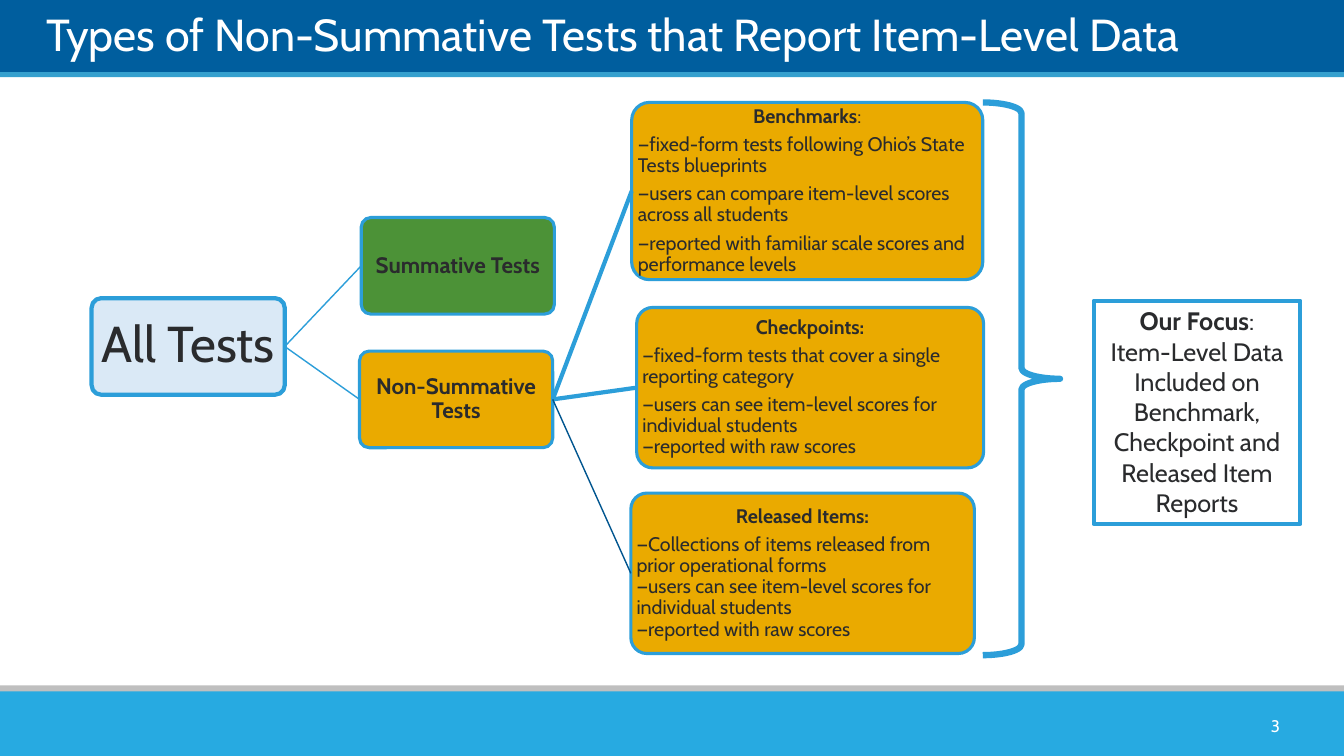
"""Build the slide that sorts tests into summative and non-summative types."""
from lxml.etree import SubElement
from pptx import Presentation
from pptx.dml.color import RGBColor
from pptx.enum.shapes import MSO_CONNECTOR as LINK, MSO_SHAPE as SHAPE
from pptx.enum.text import MSO_ANCHOR as ANCHOR, PP_ALIGN as ALIGN
from pptx.oxml.ns import qn
from pptx.util import Inches, Pt

WHITE = RGBColor(0xFF, 0xFF, 0xFF)
INK = RGBColor(0x2A, 0x2B, 0x2D)
NAVY = RGBColor(0x00, 0x55, 0x8F)
HEADER = RGBColor(0x00, 0x5E, 0x9E)
STRIPE = RGBColor(0x35, 0xA0, 0xCE)
SILVER = RGBColor(0xBF, 0xBF, 0xBF)
FOOTER = RGBColor(0x27, 0xAA, 0xE1)
BLUE = RGBColor(0x2C, 0x9E, 0xD9)
PALE = RGBColor(0xDA, 0xE9, 0xF6)
GOLD = RGBColor(0xEA, 0xAA, 0x00)
GREEN = RGBColor(0x4C, 0x92, 0x37)

deck = Presentation()
deck.slide_width, deck.slide_height = Inches(13.33), Inches(7.5)
page = deck.slides.add_slide(deck.slide_layouts[6])
COLUMN, ROW = deck.slide_width / 160, deck.slide_height / 90


def add_box(kind, column, row, columns, rows, fill=None, line=None, width=2.25):
    """Add a shape placed in grid columns and rows."""
    box = page.shapes.add_shape(kind, round(column * COLUMN), round(row * ROW),
                                round(columns * COLUMN), round(rows * ROW))
    box.shadow.inherit = False
    for paint, color in ((box.fill, fill), (box.line.fill, line)):
        if color is None:
            paint.background()
        else:
            paint.solid()
            paint.fore_color.rgb = color
    if line is not None:
        box.line.width = Pt(width)
    return box


def write(box, text, size, color=INK, align=ALIGN.CENTER, body_align=None,
          anchor=ANCHOR.MIDDLE, inset=None, tight=False):
    """Fill a box with one paragraph per line, *bold* between stars, | as line break."""
    frame = box.text_frame
    frame.word_wrap = True
    frame.vertical_anchor = anchor
    if inset is not None:
        frame.margin_left = frame.margin_right = Inches(inset)
        frame.margin_top = frame.margin_bottom = Inches(inset)
    for index, line in enumerate(text.split("\n")):
        para = frame.add_paragraph() if index else frame.paragraphs[0]
        para.alignment = body_align if index and body_align is not None else align
        if tight:
            para.line_spacing = 0.9
            para.space_after = Pt(size * 0.35)
        for part, piece in enumerate(line.split("*")):
            for step, words in enumerate(piece.split("|")):
                if step:
                    para.add_line_break()
                if words:
                    span = para.add_run()
                    span.text = words
                    span.font.name = "Cabin"
                    span.font.size = Pt(size)
                    span.font.bold = part % 2 == 1
                    span.font.color.rgb = color


for row, rows, color in ((0, 8.9, HEADER), (8.6, 0.6, STRIPE),
                         (81.6, 1.7, SILVER), (82.3, 7.7, FOOTER)):
    add_box(SHAPE.RECTANGLE, 0, row, 160, rows, color)

tests = {}
for name, column, row, fill, width, text, size, inset in (
    ("all", 10.9, 35.5, PALE, 3, "All Tests", 36, 0.03),
    ("summative", 43, 25.9, GREEN, 2.25, "*Summative Tests*", 16, 0.01),
    ("non-summative", 42.8, 41.8, GOLD, 2.25, "*Non-Summative Tests*", 16, 0.01),
):
    tests[name] = add_box(SHAPE.ROUNDED_RECTANGLE, column, row, 23, 11.5, fill, BLUE, width)
    tests[name].adjustments[0] = 0.1
    write(tests[name], text, size, inset=inset, tight=True)

for name, column, row, columns, rows, text in (
    ("benchmarks", 75.2, 12.2, 41.8, 21.1,
     "*Benchmarks*:\n"
     "—fixed-form tests following Ohio’s State Tests blueprints\n"
     "—users can compare item-level scores across all students\n"
     "—reported with familiar scale scores and performance levels"),
    ("checkpoints", 75.8, 36.6, 41.3, 19.1,
     "*Checkpoints:*\n"
     "—fixed-form tests that cover a single reporting category\n"
     "—users can see item-level scores for individual students|"
     "—reported with raw scores"),
    ("released", 75.1, 58.7, 40.9, 19.1,
     "*Released Items:*\n"
     "—Collections of items released from prior operational forms|"
     "—users can see item-level scores for individual students|"
     "—reported with raw scores"),
):
    tests[name] = add_box(SHAPE.ROUNDED_RECTANGLE, column, row, columns, rows, GOLD, BLUE)
    tests[name].adjustments[0] = 0.1
    write(tests[name], text, 14, body_align=ALIGN.LEFT, inset=0.01, tight=True)

LEFT_SIDE, RIGHT_SIDE = 1, 3
for parent, child, color, width in (
    ("all", "summative", BLUE, 1),
    ("all", "non-summative", BLUE, 1),
    ("non-summative", "benchmarks", BLUE, 3),
    ("non-summative", "checkpoints", BLUE, 3),
    ("non-summative", "released", NAVY, 1),
):
    branch = page.shapes.add_connector(LINK.STRAIGHT, 0, 0, 0, 0)
    branch.begin_connect(tests[parent], RIGHT_SIDE)
    branch.end_connect(tests[child], LEFT_SIDE)
    branch.line.color.rgb = color
    branch.line.width = Pt(width)
    SubElement(branch._element.spPr, qn("a:effectLst"))

brace = add_box(SHAPE.RIGHT_BRACE, 117, 12.2, 9.2, 65.8, line=BLUE, width=4.5)
brace.adjustments[0] = 0.14
brace.adjustments[1] = 0.5

focus = add_box(SHAPE.RECTANGLE, 130.2, 35.8, 24.6, 26.6, line=BLUE, width=3)
write(focus, "*Our Focus*:\nItem-Level Data Included on Benchmark, "
      "Checkpoint and Released Item Reports", 18, anchor=ANCHOR.TOP)

for column, row, columns, rows, text, size in (
    (4.3, 0.2, 147.2, 9.6, "Types of Non-Summative Tests that Report Item-Level Data", 32),
    (150.1, 84.6, 9.2, 3.6, "3", 12),
):
    label = page.shapes.add_textbox(round(column * COLUMN), round(row * ROW),
                                    round(columns * COLUMN), round(rows * ROW))
    write(label, text, size, WHITE, ALIGN.LEFT, anchor=ANCHOR.TOP)

deck.save("out.pptx")
